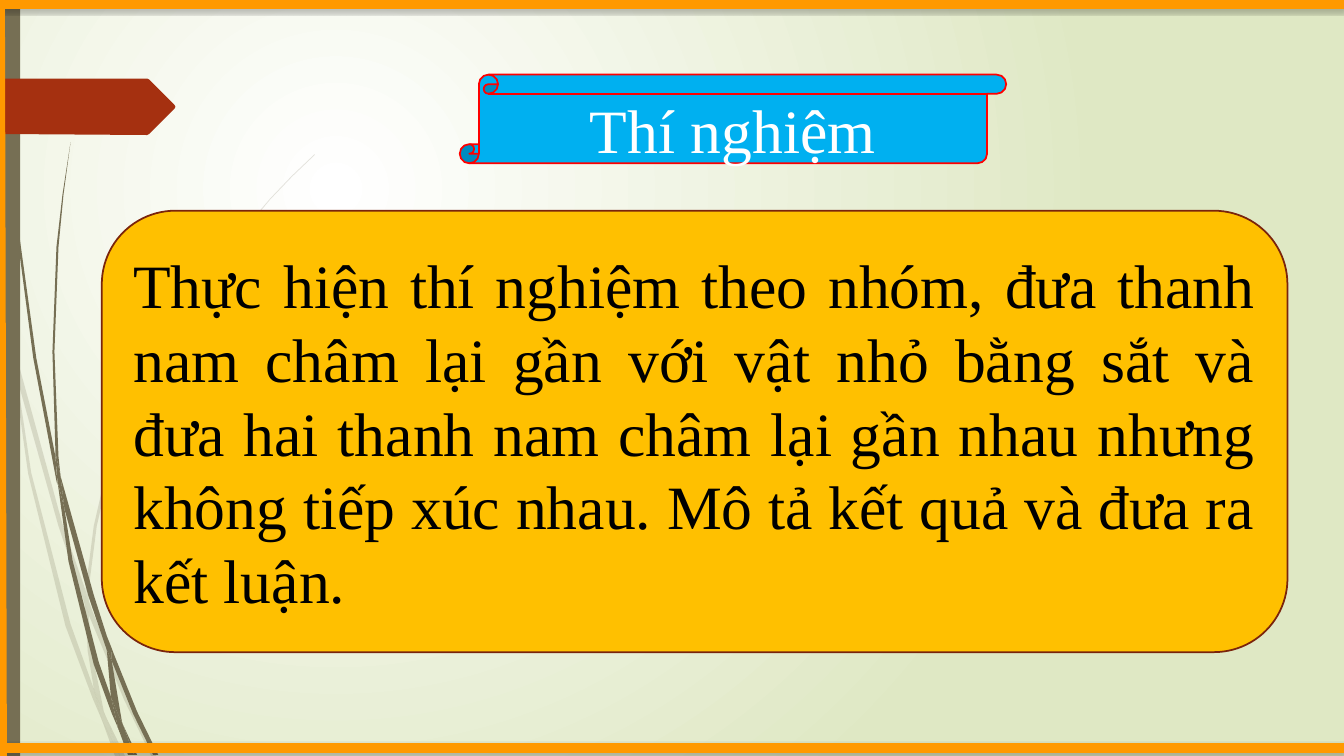
from lxml import etree
from pptx import Presentation
from pptx.dml.color import RGBColor
from pptx.enum.shapes import MSO_CONNECTOR, MSO_SHAPE
from pptx.enum.text import MSO_ANCHOR, MSO_AUTO_SIZE, PP_ALIGN
from pptx.oxml import parse_xml
from pptx.oxml.ns import nsdecls, qn
from pptx.util import Inches, Pt

WHITE = RGBColor(0xFF, 0xFF, 0xFF)
BLACK = RGBColor(0x00, 0x00, 0x00)
PALE_GREEN = RGBColor(0xDF, 0xE8, 0xC4)
OLIVE = RGBColor(0x76, 0x6F, 0x54)
RUST = RGBColor(0xA5, 0x30, 0x10)
DARK_RUST = RGBColor(0x7A, 0x24, 0x0C)
SKY = RGBColor(0x00, 0xB0, 0xF0)
RED = RGBColor(0xFF, 0x00, 0x00)
AMBER = RGBColor(0xFF, 0xC0, 0x00)
ORANGE = RGBColor(0xFF, 0x99, 0x00)
FONT = "Times New Roman"
W, H = 13.33, 7.5

TASK = ("Thực hiện thí nghiệm theo nhóm, đưa thanh nam châm lại gần với vật nhỏ "
        "bằng sắt và đưa hai thanh nam châm lại gần nhau nhưng không tiếp xúc nhau. "
        "Mô tả kết quả và đưa ra kết luận.")

# Outlines of the grass blades, in inches
PALE_BLADES = [
    [(0.11, 3.5), (0.09, 3.22), (0, 2.82), (0, 2.99), (0.1, 3.44)],
    [(0.58, 5.22), (0.84, 5.99), (0.85, 5.86), (0.62, 5.2), (0.14, 3.45), (0.17, 3.76)],
    [(0.92, 6.07), (0.88, 5.96), (0.88, 6.1), (1.23, 6.94), (1.5, 7.5), (1.55, 7.5),
     (1.27, 6.92)],
    [(1.19, 7.5), (1.24, 7.5), (1.05, 7.11)],
    [(0.93, 6.83), (0.7, 6.19), (0.31, 4.69), (0.17, 3.76), (0.11, 3.5), (0.28, 4.7),
     (0.65, 6.21), (0.92, 6.93), (1.01, 7.14), (0.99, 7.07)],
    [(0.84, 5.99), (0.87, 6.46), (0.93, 6.83), (0.96, 6.92), (1.05, 7.11), (1.03, 7.06),
     (0.91, 6.46), (0.88, 6.1), (0.88, 6.08)],
    [(0.88, 5.84), (0.96, 5.22), (1.1, 4.62), (1.6, 3.49), (2.29, 2.45), (2.68, 1.98),
     (2.9, 1.75), (3.12, 1.54), (3.12, 1.53), (2.89, 1.75), (2.68, 1.97), (2.28, 2.44),
     (1.58, 3.48), (1.07, 4.61), (0.93, 5.22), (0.85, 5.84), (0.88, 5.96)],
    [(1.01, 7.14), (1.14, 7.5), (1.19, 7.5)],
    [(0.88, 6.08), (0.88, 5.96), (0.85, 5.86), (0.84, 5.99)],
    [(0.96, 6.92), (0.93, 6.83), (0.99, 7.07), (1.01, 7.14), (1.19, 7.5), (1.05, 7.11)],
]
DARK_BLADES = [
    [(0.07, 1.1), (0.17, 2.33), (0.33, 3.55), (0.56, 4.77), (0.57, 4.81), (0.55, 4.53),
     (0.36, 3.55), (0.19, 2.32), (0.08, 1.09), (0.05, 0.48), (0.04, 0), (0.03, 0),
     (0.04, 0.48)],
    [(0.88, 5.92), (1.06, 6.45), (1.06, 6.31), (0.93, 5.9), (0.6, 4.72), (0.64, 5.05)],
    [(1.13, 6.49), (1.1, 6.41), (1.11, 6.56), (1.32, 7.08), (1.52, 7.49), (1.57, 7.49),
     (1.36, 7.06)],
    [(1.1, 6.91), (0.98, 6.57), (0.72, 5.56), (0.64, 5.05), (0.57, 4.77), (0.68, 5.57),
     (0.93, 6.59), (1.11, 7.08), (1.17, 7.22), (1.16, 7.17)],
    [(0.6, 4.72), (0.58, 4.53), (0.54, 3.49), (0.58, 2.45), (0.63, 1.93), (0.7, 1.41),
     (0.62, 1.93), (0.56, 2.45), (0.52, 3.49), (0.55, 4.49)],
    [(1.33, 7.49), (1.36, 7.49), (1.22, 7.19)],
    [(0.57, 4.77), (0.64, 5.05), (0.6, 4.72), (0.55, 4.49), (0.55, 4.53)],
    [(1.17, 7.22), (1.27, 7.49), (1.31, 7.49)],
    [(1.06, 6.45), (1.1, 6.91), (1.16, 7.06), (1.22, 7.19), (1.21, 7.16), (1.11, 6.56)],
    [(1.06, 6.45), (1.11, 6.56), (1.1, 6.41), (1.06, 6.31)],
    [(1.16, 7.06), (1.1, 6.91), (1.16, 7.17), (1.17, 7.22), (1.3, 7.49), (1.33, 7.49),
     (1.22, 7.19)],
]
TAG = [(1.73, 1.08), (1.48, 1.33), (1.46, 1.34), (0, 1.33), (0, 0.78), (1.46, 0.78),
       (1.48, 0.79), (1.73, 1.04), (1.74, 1.06)]


def set_background(s):
    fill = s.background.fill
    fill.gradient()
    for stop, color in zip(fill.gradient_stops, (WHITE, PALE_GREEN)):
        stop.color.rgb = color
    grad = s.background._cSld.find(".//" + qn("a:gradFill"))
    grad.replace(grad.find(qn("a:lin")), parse_xml(
        f'<a:path {nsdecls("a")} path="circle">'
        '<a:fillToRect l="50000" t="50000" r="100000" b="100000"/></a:path>'))


def style(shape, fill, line=None):
    shape.shadow.inherit = False
    shape.fill.solid()
    shape.fill.fore_color.rgb = fill
    if line is None:
        shape.line.fill.background()
    else:
        shape.line.color.rgb = line
        shape.line.width = Pt(1.25)


def add_outline(shapes, points, color, opacity=100):
    start, *rest = [(Inches(x), Inches(y)) for x, y in points]
    builder = shapes.build_freeform(*start)
    builder.add_line_segments(rest)
    shape = builder.convert_to_shape()
    style(shape, color)
    if opacity < 100:
        clr = shape.fill._xPr.find(".//" + qn("a:srgbClr"))
        etree.SubElement(clr, qn("a:alpha"), val=str(opacity * 1000))


def add_box(s, kind, left, top, width, height, fill, line=None):
    shape = s.shapes.add_shape(kind, Inches(left), Inches(top),
                               Inches(width), Inches(height))
    style(shape, fill, line)
    return shape


def add_border(shapes, x1, y1, x2, y2, shadow=False):
    line = shapes.add_connector(MSO_CONNECTOR.STRAIGHT, Inches(x1), Inches(y1),
                                Inches(x2), Inches(y2))
    line.line.color.rgb = ORANGE
    line.line.width = Pt(7)
    effects = etree.SubElement(line._element.spPr, qn("a:effectLst"))
    if shadow:
        effects.append(parse_xml(
            f'<a:outerShdw {nsdecls("a")} blurRad="{Pt(3)}" dist="{Pt(2)}" dir="5400000">'
            '<a:srgbClr val="000000"><a:alpha val="25000"/></a:srgbClr></a:outerShdw>'))


def write(shape, text, color, align):
    tf = shape.text_frame
    tf.word_wrap = True
    tf.auto_size = MSO_AUTO_SIZE.NONE
    tf.vertical_anchor = MSO_ANCHOR.MIDDLE
    p = tf.paragraphs[0]
    p.alignment = align
    r = p.add_run()
    r.text = text
    r.font.name = FONT
    r.font.size = Pt(44)
    r.font.color.rgb = color


def add_title(s, text, left, top, width, height):
    title = s.shapes.title
    title.left, title.top = Inches(left), Inches(top)
    title.width, title.height = Inches(width), Inches(height)
    write(title, text, WHITE, PP_ALIGN.CENTER)
    tf = title.text_frame
    tf.margin_top = tf.margin_bottom = 0
    # Bring the title in front of the scroll
    title.element.getparent().append(title.element)


def main():
    prs = Presentation()
    prs.slide_width, prs.slide_height = Inches(W), Inches(H)
    s = prs.slides.add_slide(prs.slide_layouts[5])
    set_background(s)

    # Grass, side bar and tag
    for blades, opacity in ((PALE_BLADES, 20), (DARK_BLADES, 100)):
        grass = s.shapes.add_group_shape()
        for points in blades:
            add_outline(grass.shapes, points, OLIVE, opacity)
    add_box(s, MSO_SHAPE.RECTANGLE, 0, 0, 0.2, H, OLIVE)
    add_outline(s.shapes, TAG, RUST)

    # Title on its scroll
    scroll = add_box(s, MSO_SHAPE.VERTICAL_SCROLL, 4.56, 0.74, 5.42, 0.88, SKY, RED)
    scroll.adjustments[0] = 0.216
    add_title(s, "Thí nghiệm", 4.75, 0.93, 5.04, 0.69)

    # Task card
    card = add_box(s, MSO_SHAPE.ROUNDED_RECTANGLE, 1.01, 2.09, 11.76, 4.38,
                   AMBER, DARK_RUST)
    write(card, TASK, BLACK, PP_ALIGN.JUSTIFY)

    # Border lines
    border = s.shapes.add_group_shape()
    for y in (0.04, 7.42):
        add_border(border.shapes, 0.02, y, W, y, shadow=True)
    add_border(border.shapes, 0, 0, 0.02, H)

    prs.save("out.pptx")


if __name__ == "__main__":
    main()
